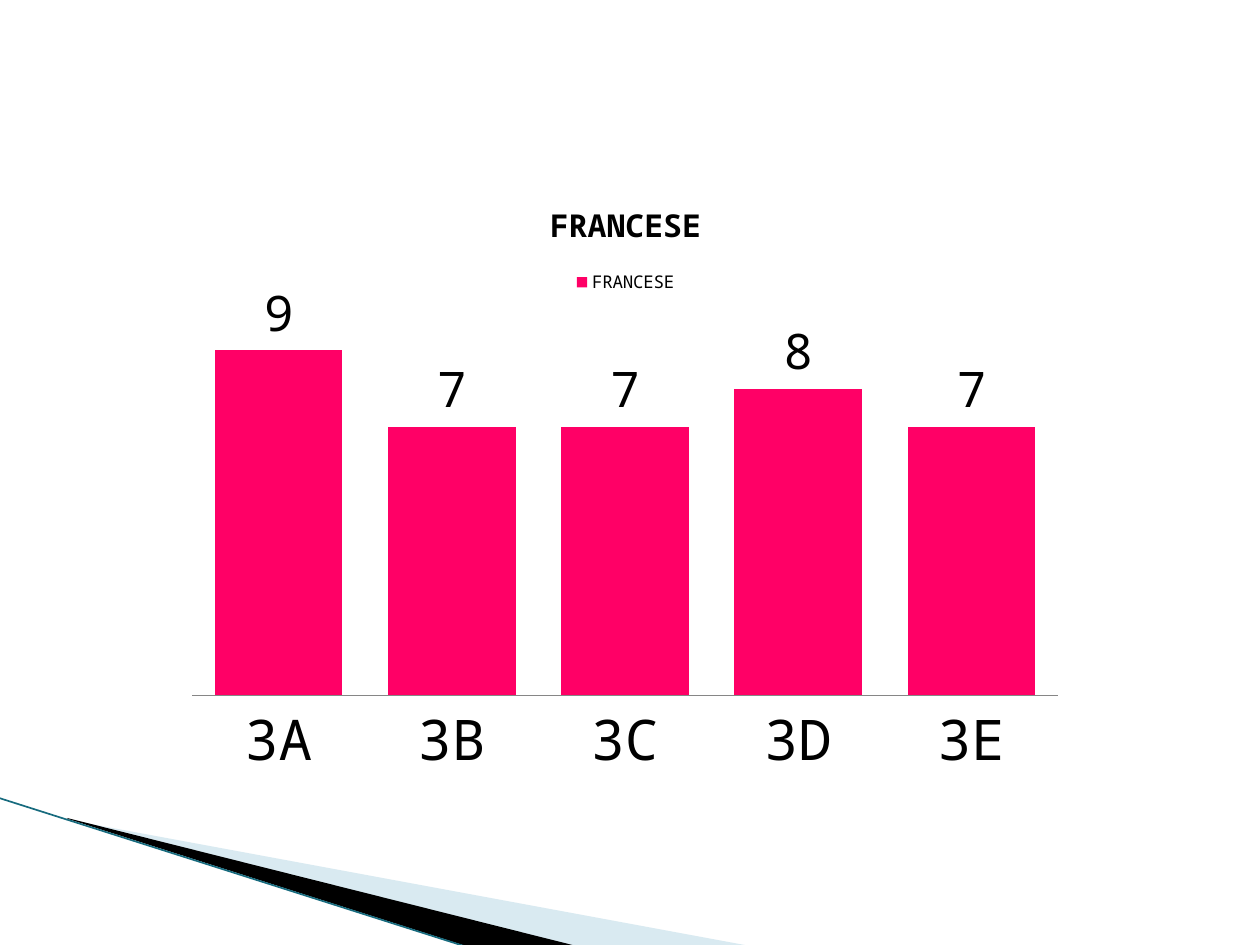
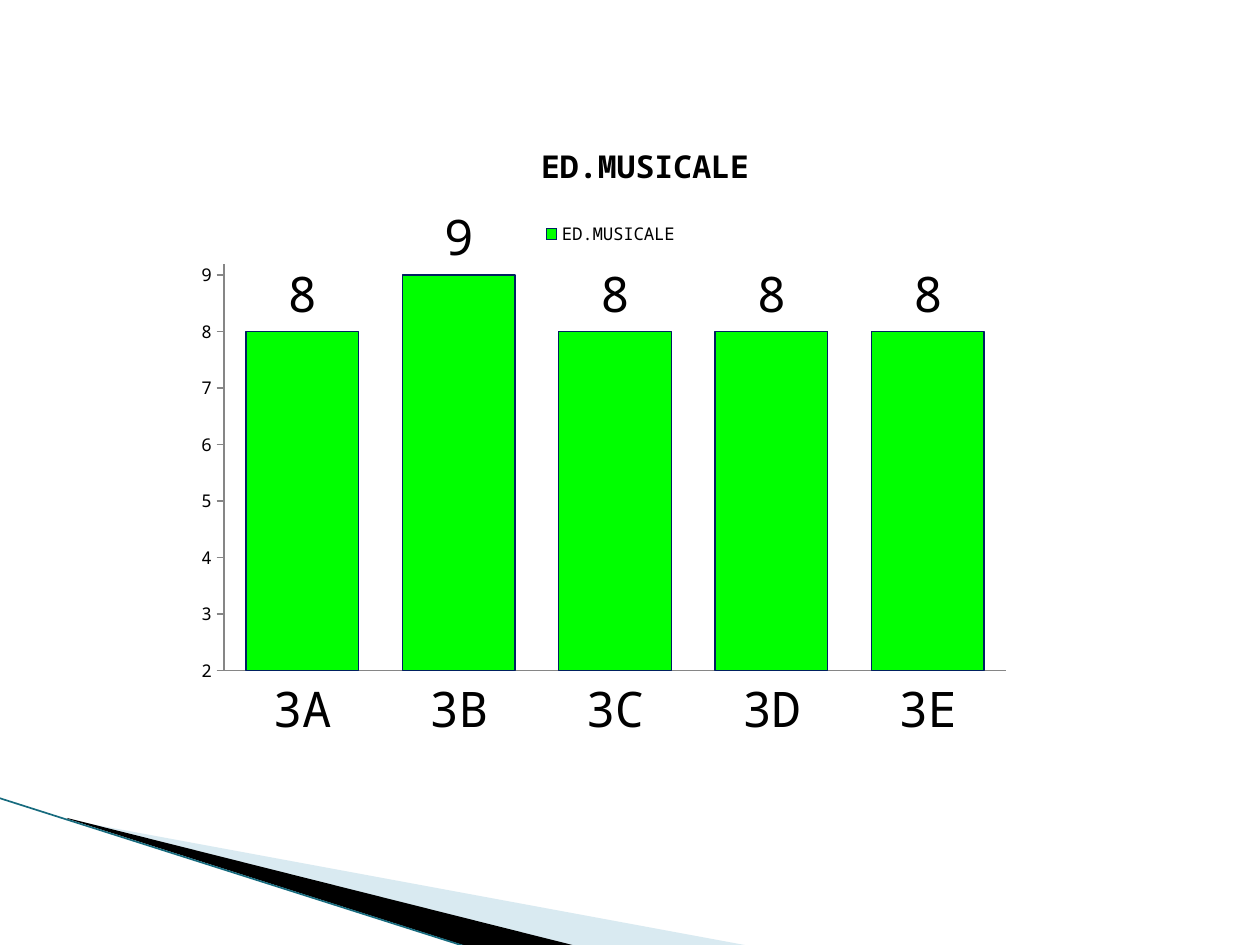
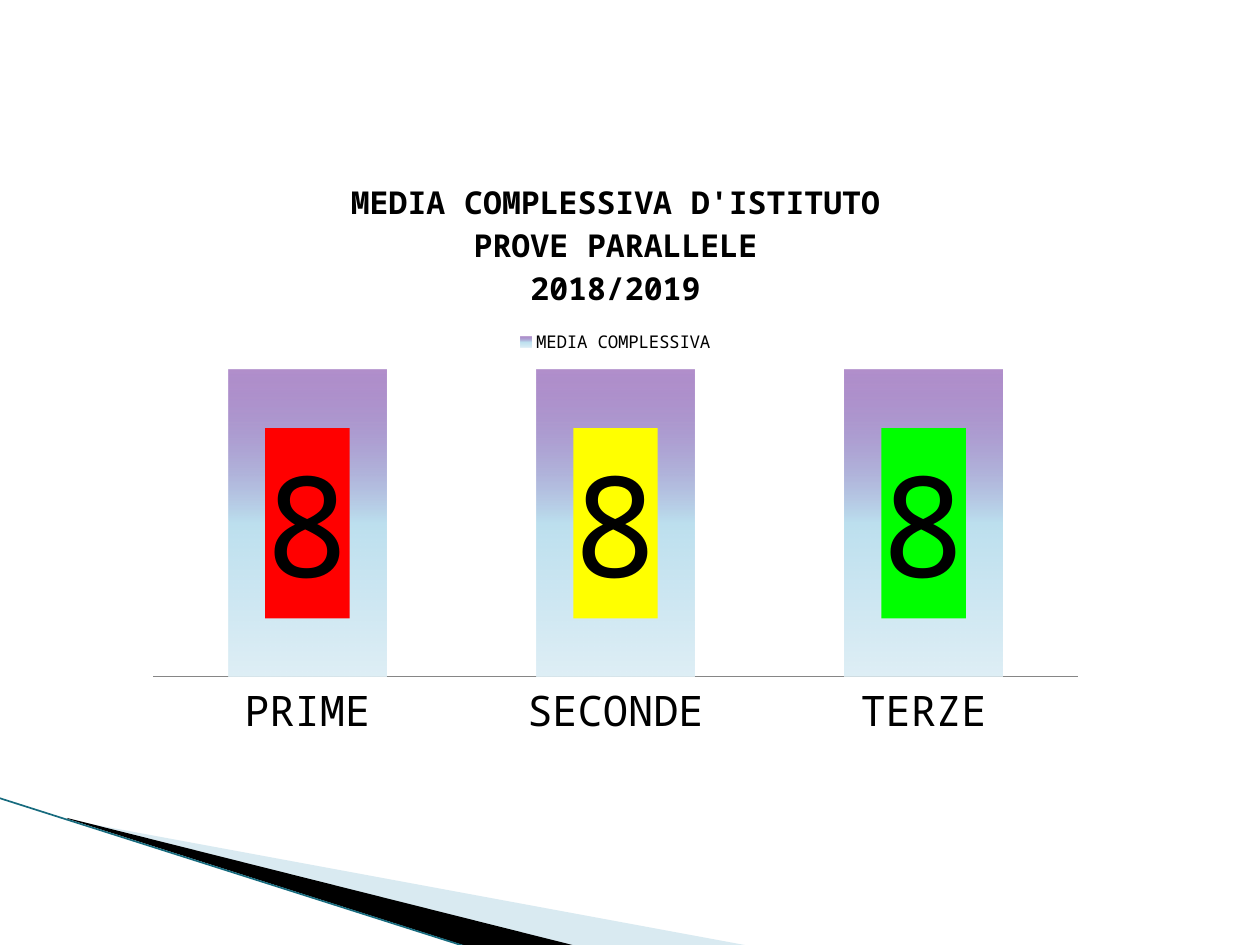
from lxml import etree
from pptx import Presentation
from pptx import util as u
from pptx.chart.data import CategoryChartData
from pptx.dml.color import RGBColor
from pptx.enum import chart as ch
from pptx.enum import shapes
from pptx.oxml import parse_xml
from pptx.oxml.ns import nsdecls, qn

SCALE = 914400 / 126
FONT = "Noto Sans Mono"
BLACK = RGBColor(0x00, 0x00, 0x00)
GREY = RGBColor(0x86, 0x86, 0x86)
TEAL = RGBColor(0x17, 0x6B, 0x7E)
PALE_BLUE = RGBColor(0xA0, 0xCB, 0xDC)
PINK = RGBColor(0xFF, 0x00, 0x66)
GREEN = RGBColor(0x00, 0xFF, 0x00)
NAVY = RGBColor(0x00, 0x20, 0x60)
RED = RGBColor(0xFF, 0x00, 0x00)
YELLOW = RGBColor(0xFF, 0xFF, 0x00)
PURPLE = RGBColor(0x70, 0x30, 0xA0)
SKY = RGBColor(0xBD, 0xE0, 0xEF)
MIST = RGBColor(0xDF, 0xEF, 0xF6)
THIRD_YEAR = ["3A", "3B", "3C", "3D", "3E"]


def px(n):
    """Turn pixels into EMU."""
    return u.Emu(round(n * SCALE))


def style_font(font, size, bold=False):
    """Apply the shared typeface and text colour."""
    font.name = FONT
    font.size = u.Pt(size)
    font.bold = bold
    font.color.rgb = BLACK


def add_wedge(s, points, color, alpha=100):
    """Draw a closed, filled outline through the points."""
    fb = s.shapes.build_freeform(*points[0], scale=SCALE)
    fb.add_line_segments(points[1:], close=True)
    sp = fb.convert_to_shape()
    sp.shadow.inherit = False
    sp.line.fill.background()
    sp.fill.solid()
    sp.fill.fore_color.rgb = color
    if alpha < 100:
        clr = sp._element.spPr.find(qn("a:solidFill"))[0]
        etree.SubElement(clr, qn("a:alpha"), val=str(alpha * 1000))


def add_corner(s):
    """Draw the swoosh in the lower left corner."""
    add_wedge(s, [(69, 820), (750, 946), (575, 946), (69, 819)], PALE_BLUE, 40)
    add_wedge(s, [(67, 818), (576, 946), (469, 947), (68, 819)], BLACK)
    cx = s.shapes.add_connector(shapes.MSO_CONNECTOR.STRAIGHT,
                                px(-1), px(798), px(467), px(947))
    cx.line.color.rgb = TEAL
    cx.line.width = u.Pt(0.95)
    etree.SubElement(cx._element.spPr, qn("a:effectLst"))


def set_layout(parent, index, **values):
    """Give a chart part a manual layout."""
    old = parent.find(qn("c:layout"))
    if old is not None:
        index = parent.index(old)
        parent.remove(old)
    items = "".join(f'<c:{k} val="{v}"/>' for k, v in values.items())
    parent.insert(index, parse_xml(
        f'<c:layout {nsdecls("c")}><c:manualLayout>{items}'
        '</c:manualLayout></c:layout>'))


def place_plot(chart, frame, plot):
    """Fix the inner plot area, both boxes in slide pixels."""
    left, top, width, height = frame
    x, y, w, h = plot
    set_layout(chart._chartSpace.chart.plotArea, 0, layoutTarget="inner",
               xMode="edge", yMode="edge",
               x=round((x - left) / width, 3), y=round((y - top) / height, 3),
               w=round(w / width, 3), h=round(h / height, 3))


def add_column_chart(s, frame, plot, title, name, cats, vals, cat_size,
                     label_size, gap, low=0, high=10, stacked=False):
    """Add a titled column chart with one series."""
    data = CategoryChartData()
    data.categories = cats
    data.add_series(name, vals)
    kind = ch.XL_CHART_TYPE
    chart = s.shapes.add_chart(
        kind.COLUMN_STACKED_100 if stacked else kind.COLUMN_CLUSTERED,
        *map(px, frame), data).chart
    style_font(chart.font, 10)
    chart.has_title = True
    tf = chart.chart_title.text_frame
    tf.text = title
    for p in tf.paragraphs:
        style_font(p.font, 18, True)
    chart.has_legend = True
    chart.legend.position = ch.XL_LEGEND_POSITION.TOP
    chart.legend.include_in_layout = False
    style_font(chart.legend.font, 10)
    cat, val = chart.category_axis, chart.value_axis
    cat.major_tick_mark = ch.XL_TICK_MARK.NONE
    cat.format.line.color.rgb = GREY
    style_font(cat.tick_labels.font, cat_size)
    val.has_major_gridlines = False
    val.visible = False
    if not stacked:
        val.minimum_scale, val.maximum_scale = low, high
    bars = chart.plots[0]
    bars.vary_by_categories = False
    bars.gap_width = gap
    bars.overlap = 100 if stacked else -25
    bars.has_data_labels = True
    labels = bars.data_labels
    labels.show_value = True
    position = ch.XL_LABEL_POSITION
    labels.position = position.CENTER if stacked else position.OUTSIDE_END
    style_font(labels.font, label_size)
    place_plot(chart, frame, plot)
    return chart


def fill_series(chart, color):
    """Fill the columns with one colour."""
    ser = chart.plots[0].series[0]
    ser.invert_if_negative = False
    ser.format.fill.solid()
    ser.format.fill.fore_color.rgb = color
    return ser


def show_value_axis(chart):
    """Show the value axis with outer ticks at every unit."""
    val = chart.value_axis
    val.visible = True
    val.major_unit = 1
    val.major_tick_mark = ch.XL_TICK_MARK.OUTSIDE
    val.format.line.color.rgb = GREY
    style_font(val.tick_labels.font, 10)


def fade_series(chart, stops):
    """Fill the columns from top to bottom through the stops."""
    ser = fill_series(chart, stops[0][1])
    solid = ser._element.find(qn("c:spPr")).find(qn("a:solidFill"))
    gs = "".join(
        f'<a:gs pos="{pos * 1000}"><a:srgbClr val="{color}">'
        f'<a:alpha val="{alpha * 1000}"/></a:srgbClr></a:gs>'
        for pos, color, alpha in stops)
    solid.getparent().replace(solid, parse_xml(
        f'<a:gradFill {nsdecls("a")} rotWithShape="1"><a:gsLst>{gs}</a:gsLst>'
        '<a:lin ang="5400000" scaled="0"/></a:gradFill>'))


def color_labels(chart, colors, size):
    """Put a coloured box behind each value label."""
    ser = chart.plots[0].series[0]
    for i, color in enumerate(colors):
        label = ser.points[i].data_label
        style_font(label.font, size)
        label.position = ch.XL_LABEL_POSITION.CENTER
        txpr = label._get_or_add_dLbl().find(qn("c:txPr"))
        txpr.addprevious(parse_xml(
            f'<c:spPr {nsdecls("c", "a")}><a:solidFill>'
            f'<a:srgbClr val="{color}"/></a:solidFill></c:spPr>'))


def add_french(s):
    """Chart the French marks."""
    chart = add_column_chart(
        s, (174, 175, 903, 615), (192, 312, 866, 383), "FRANCESE", "FRANCESE",
        THIRD_YEAR, [9, 7, 7, 8, 7], 32, 28, 36)
    fill_series(chart, PINK)


def add_music(s):
    """Chart the music marks."""
    chart = add_column_chart(
        s, (194, 125, 833, 704), (224, 264, 782, 407), "ED.MUSICALE",
        "ED.MUSICALE", THIRD_YEAR, [8, 9, 8, 8, 8], 28, 28, 39, 2, 9.2)
    line = fill_series(chart, GREEN).format.line
    line.color.rgb = NAVY
    line.width = u.Pt(0.75)
    show_value_axis(chart)
    set_layout(chart.chart_title._element, 1, xMode="edge", yMode="edge",
               x=0.41, y=0.014)


def add_overall(s):
    """Chart the overall averages of the school."""
    chart = add_column_chart(
        s, (134, 155, 963, 595), (153, 370, 924, 307),
        "MEDIA COMPLESSIVA D'ISTITUTO\nPROVE PARALLELE\n2018/2019",
        "MEDIA COMPLESSIVA", ["PRIME", "SECONDE", "TERZE"], [8, 8, 8],
        24, 80, 95, stacked=True)
    fade_series(chart, [(0, PURPLE, 54), (50, SKY, 100), (100, MIST, 100)])
    color_labels(chart, [RED, YELLOW, GREEN], 80)


def main():
    """Build the three slides."""
    prs = Presentation()
    prs.slide_width, prs.slide_height = px(1260), px(945)
    for add_content in (add_french, add_music, add_overall):
        s = prs.slides.add_slide(prs.slide_layouts[6])
        add_corner(s)
        add_content(s)
    prs.save("out.pptx")


if __name__ == "__main__":
    main()
